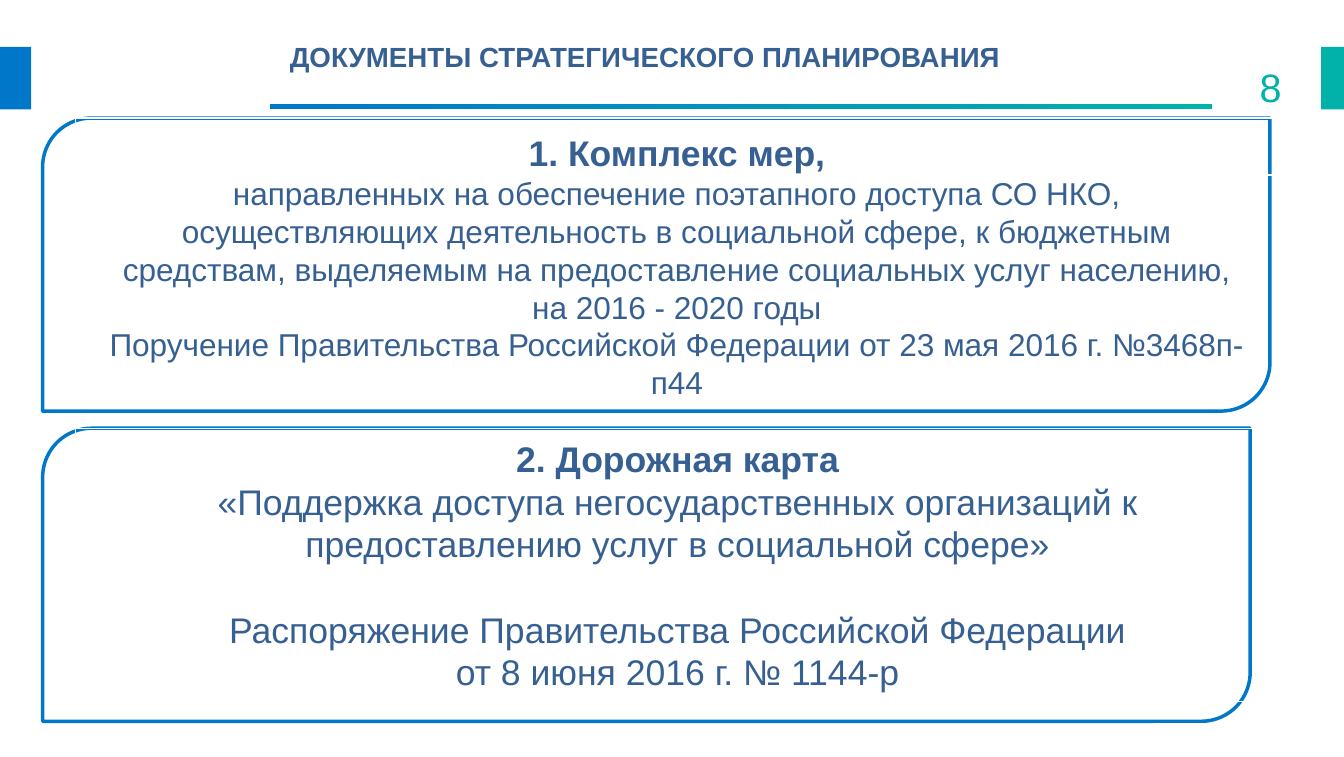
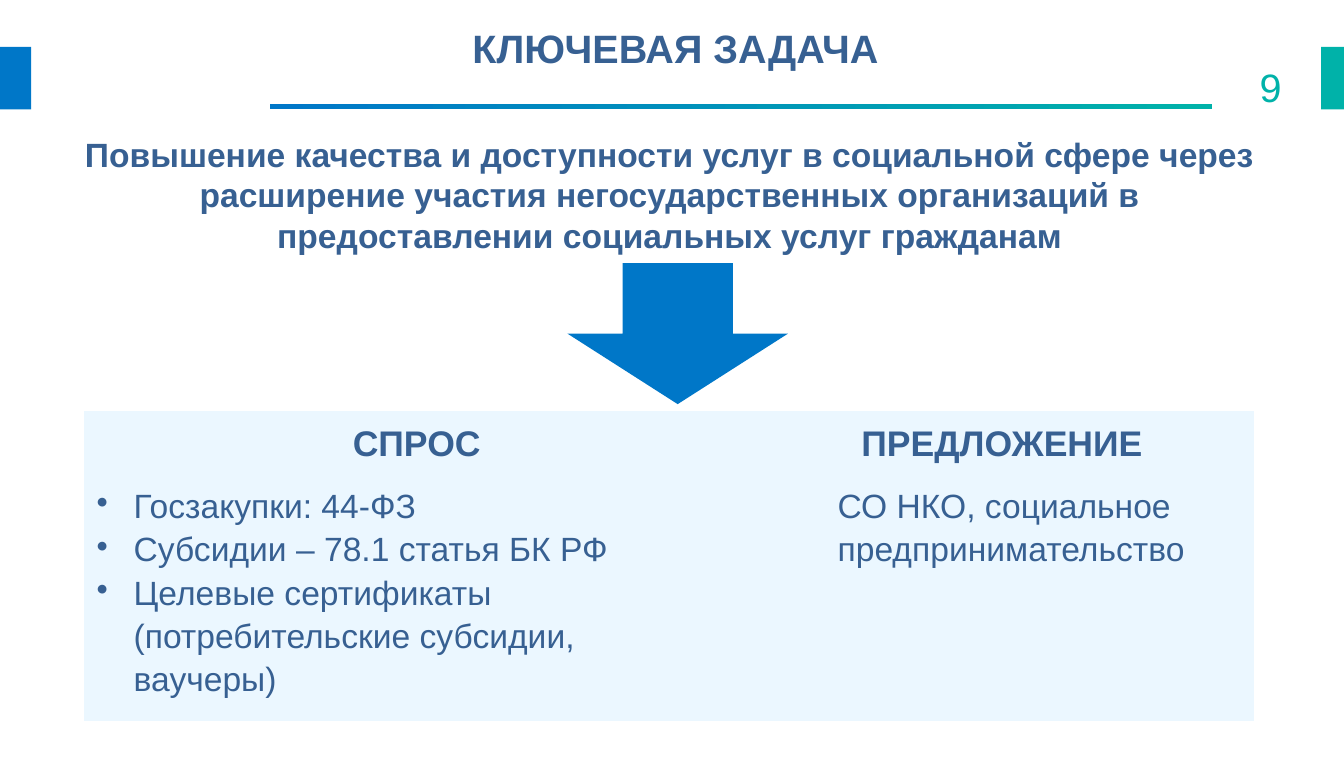
from dataclasses import dataclass

from lxml.etree import SubElement
from pptx import Presentation
from pptx.dml.color import RGBColor
from pptx.enum.shapes import MSO_SHAPE
from pptx.enum.text import MSO_ANCHOR, PP_ALIGN
from pptx.oxml.ns import qn
from pptx.shapes.autoshape import Shape
from pptx.slide import Slide
from pptx.text.text import TextFrame, _Paragraph
from pptx.util import Inches, Pt

BLUE = RGBColor(0x00, 0x77, 0xC8)
TEAL = RGBColor(0x00, 0xB2, 0xA9)
NAVY = RGBColor(0x37, 0x60, 0x92)
PALE = RGBColor(0xEB, 0xF7, 0xFF)
WHITE = RGBColor(0xFF, 0xFF, 0xFF)
FONT = "Arial"
NO_STYLE = "{2D5ABB26-0587-4C30-8999-92F81FD0307C}"


@dataclass(frozen=True)
class Area:
    left: float
    top: float
    width: float
    height: float

    def lengths(self) -> list[Inches]:
        return [Inches(value) for value in (self.left, self.top, self.width, self.height)]


@dataclass(frozen=True)
class Line:
    text: str
    size: float
    bold: bool = False
    color: RGBColor = NAVY
    align: PP_ALIGN = PP_ALIGN.CENTER
    before: float = 0
    spacing: float | None = None
    margin: float = 0
    indent: float = 0
    bullet: bool = False


@dataclass(frozen=True)
class Document:
    frame: Area
    body: Area
    white_edge: Area
    lines: list[Line]


DOCUMENTS = [
    Document(
        Area(0.3, 0.83, 8.63, 2.06),
        Area(0.66, 0.86, 8.2, 2.02),
        Area(0.53, 0.83, 8.47, 0.4),
        [
            Line("1. Комплекс мер,", 18, True),
            Line("направленных на обеспечение поэтапного доступа СО НКО, осуществляющих "
                 "деятельность в социальной сфере, к бюджетным средствам, выделяемым на "
                 "предоставление социальных услуг населению, на 2016 - 2020 годы", 16),
            Line("Поручение Правительства Российской Федерации от 23 мая 2016 г. №3468п-п44", 16),
        ],
    ),
    Document(
        Area(0.3, 3.01, 8.49, 2.06),
        Area(0.53, 3.01, 8.47, 1.92),
        Area(0.53, 3.01, 8.47, 1.92),
        [
            Line("2. Дорожная карта", 18, True),
            Line("«Поддержка доступа негосударственных организаций к предоставлению услуг "
                 "в социальной сфере»", 18),
            Line("Распоряжение Правительства Российской Федерации", 18, before=21.6),
            Line("от 8 июня 2016 г. № 1144-р", 18),
        ],
    ),
]

GOAL = [
    Line("Повышение качества и доступности услуг в социальной сфере через", 17, True),
    Line("расширение участия негосударственных организаций в предоставлении "
         "социальных услуг гражданам", 17, True),
]


def header(text: str) -> list[Line]:
    return [Line(text, 18, True, spacing=1.15, indent=0.49)]


def demand(text: str) -> Line:
    return Line(text, 17, align=PP_ALIGN.LEFT, spacing=1.15,
                margin=0.26, indent=-0.26, bullet=True)


def supply(text: str) -> Line:
    return Line(text, 17, align=PP_ALIGN.LEFT, spacing=1.15, margin=1.02)


MARKET = [
    [header("СПРОС"), header("ПРЕДЛОЖЕНИЕ")],
    [
        [demand("Госзакупки: 44-ФЗ"),
         demand("Субсидии – 78.1 статья БК РФ"),
         demand("Целевые сертификаты (потребительские субсидии, ваучеры)")],
        [supply("СО НКО, социальное"), supply("предпринимательство")],
    ],
]


def format_paragraph(para: _Paragraph, line: Line) -> None:
    para.text = line.text
    para.alignment = line.align
    para.space_before = Pt(line.before)
    if line.spacing:
        para.line_spacing = line.spacing
    properties = para._p.get_or_add_pPr()
    properties.set("marL", str(Inches(line.margin)))
    properties.set("indent", str(Inches(line.indent)))
    if line.bullet:
        SubElement(properties, qn("a:buChar")).set("char", "•")
    font = para.font
    font.name = FONT
    font.size = Pt(line.size)
    font.bold = line.bold
    font.color.rgb = line.color


def write(frame: TextFrame, lines: list[Line]) -> None:
    for position, line in enumerate(lines):
        para = frame.add_paragraph() if position else frame.paragraphs[0]
        format_paragraph(para, line)


def add_text(page: Slide, area: Area, lines: list[Line], side: float = 0.1,
             edge: float = 0.05, anchor: MSO_ANCHOR = MSO_ANCHOR.TOP) -> None:
    frame = page.shapes.add_textbox(*area.lengths()).text_frame
    frame.word_wrap = True
    frame.vertical_anchor = anchor
    frame.margin_left = frame.margin_right = Inches(side)
    frame.margin_top = frame.margin_bottom = Inches(edge)
    write(frame, lines)


def add_figure(page: Slide, kind: MSO_SHAPE, area: Area, fill: RGBColor | None = None,
               line: RGBColor | None = None, width: float = 0.75) -> Shape:
    shape = page.shapes.add_shape(kind, *area.lengths())
    shape.shadow.inherit = False
    if fill is None:
        shape.fill.background()
    else:
        shape.fill.solid()
        shape.fill.fore_color.rgb = fill
    if line is None:
        shape.line.fill.background()
    else:
        shape.line.color.rgb = line
        shape.line.width = Pt(width)
    return shape


def add_page(deck: Presentation, title: Line, title_area: Area, number: int) -> Slide:
    page = deck.slides.add_slide(deck.slide_layouts[6])
    add_figure(page, MSO_SHAPE.RECTANGLE, Area(0, 0.33, 0.22, 0.44), BLUE)
    add_figure(page, MSO_SHAPE.RECTANGLE, Area(9.29, 0.33, 0.16, 0.44), TEAL)
    rule = add_figure(page, MSO_SHAPE.RECTANGLE, Area(1.9, 0.73, 6.62, 0.04))
    rule.fill.gradient()
    rule.fill.gradient_angle = 0
    for stop, color, position in zip(rule.fill.gradient_stops, (BLUE, TEAL), (0, 1)):
        stop.color.rgb = color
        stop.position = position
    add_text(page, title_area, [title], 0.08, 0.08)
    add_text(page, Area(8.53, 0.39, 0.58, 0.28),
             [Line(str(number), 20, color=TEAL, align=PP_ALIGN.RIGHT)])
    return page


def add_document(page: Slide, document: Document) -> None:
    add_figure(page, MSO_SHAPE.ROUND_2_DIAG_RECTANGLE, document.frame, line=BLUE, width=1.75)
    add_figure(page, MSO_SHAPE.RECTANGLE, document.white_edge, line=WHITE)
    add_text(page, document.body, document.lines, anchor=MSO_ANCHOR.MIDDLE)


def add_market(page: Slide) -> None:
    area = Area(0.59, 2.89, 8.23, 2.16)
    table = page.shapes.add_table(2, 2, *area.lengths()).table
    table._tbl.tblPr.find(qn("a:tableStyleId")).text = NO_STYLE
    table.first_row = table.horz_banding = False
    for column, width in zip(table.columns, (4.19, 4.04)):
        column.width = Inches(width)
    for row, height, contents in zip(table.rows, (0.45, 1.71), MARKET):
        row.height = Inches(height)
        for cell, lines in zip(row.cells, contents):
            cell.fill.solid()
            cell.fill.fore_color.rgb = PALE
            cell.margin_left = cell.margin_right = Inches(0.09)
            cell.margin_top = cell.margin_bottom = Inches(0.05)
            write(cell.text_frame, lines)


def main() -> None:
    deck = Presentation()
    deck.slide_width, deck.slide_height = Inches(9.45), Inches(5.32)

    page = add_page(deck, Line("ДОКУМЕНТЫ СТРАТЕГИЧЕСКОГО ПЛАНИРОВАНИЯ", 14, True),
                    Area(-0.21, 0.2, 9.49, 0.67), 8)
    for document in DOCUMENTS:
        add_document(page, document)

    page = add_page(deck, Line("КЛЮЧЕВАЯ ЗАДАЧА", 20, True), Area(0.35, 0.09, 8.8, 0.59), 9)
    add_text(page, Area(0.49, 0.9, 8.44, 0.94), GOAL, 0.08, 0.04)
    add_market(page)
    add_figure(page, MSO_SHAPE.DOWN_ARROW, Area(3.99, 1.85, 1.55, 0.99), BLUE)
    deck.save("out.pptx")


if __name__ == "__main__":
    main()
